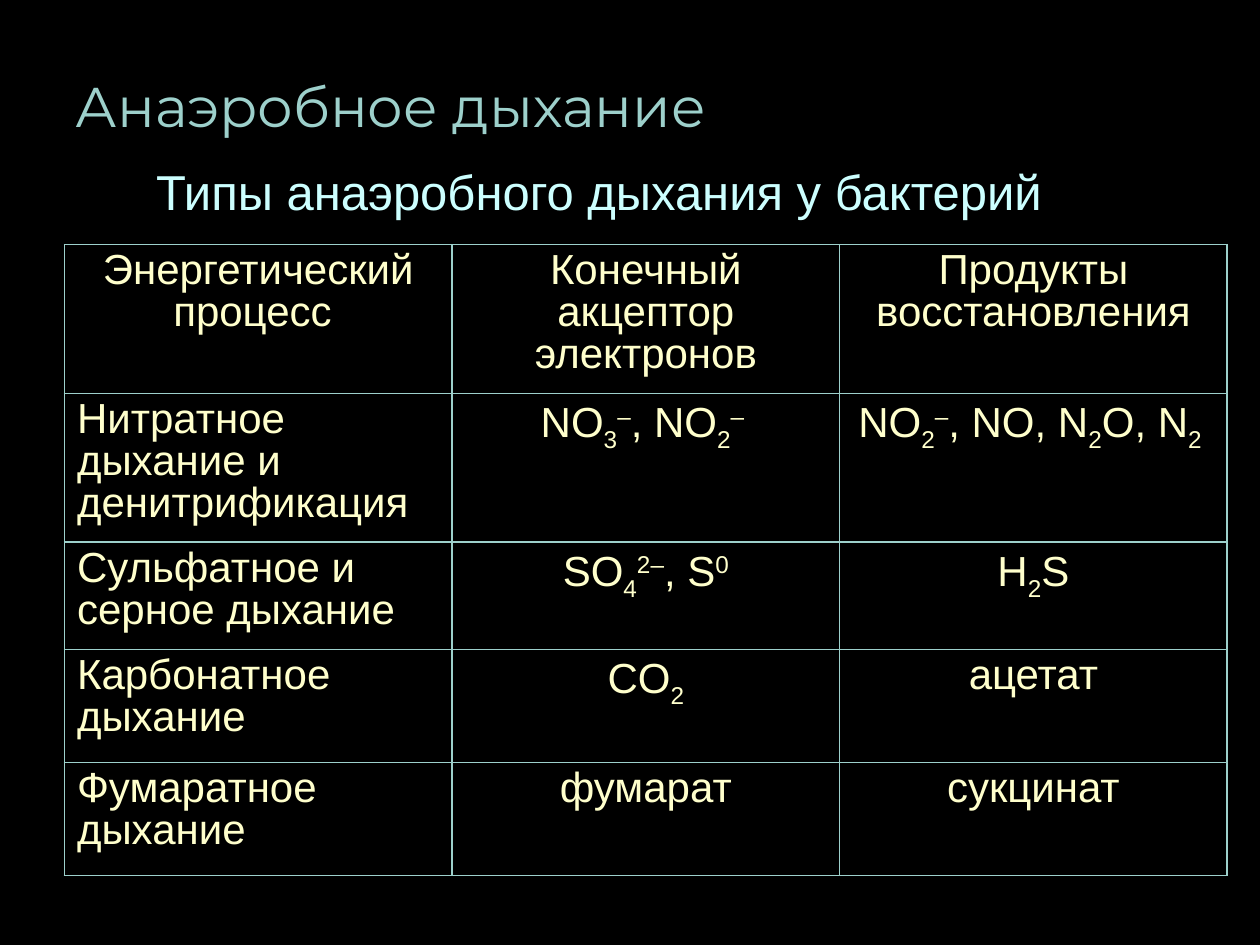
from dataclasses import dataclass

from lxml import etree
from pptx import Presentation
from pptx.dml.color import RGBColor
from pptx.enum.text import MSO_ANCHOR, MSO_AUTO_SIZE, PP_ALIGN
from pptx.oxml.ns import qn
from pptx.util import Cm, Pt

LEFT, CENTER = PP_ALIGN.LEFT, PP_ALIGN.CENTER
MIDDLE = MSO_ANCHOR.MIDDLE
NO_FIT, FIT_SHAPE = MSO_AUTO_SIZE.NONE, MSO_AUTO_SIZE.SHAPE_TO_FIT_TEXT


@dataclass(frozen=True)
class Theme:
    background: str = "000000"
    border: str = "9DD0CB"
    border_width: int = Pt(1)
    line_spacing: float = 0.9
    title: tuple = ("Montserrat", 32, "9DD0CB")
    subtitle: tuple = ("Arial", 28, "CCFFFF")
    cell: tuple = ("Arial", 24, "FFFFCC")


THEME = Theme()
BASELINES = {"_": "-25000", "^": "30000"}

# "|" parts the runs; a run led by "_" is subscript, by "^" superscript
ROWS = [
    ["Энергетический процесс ", "Конечный акцептор электронов",
     "Продукты восстановления"],
    ["Нитратное дыхание и денитрификация", "NO|_3|^–|, NO|_2|^– ",
     "NO|_2|^–|, NO, N|_2|O, N|_2 "],
    ["Сульфатное и серное дыхание", "SO|_4|^2–|, S|^0", "H|_2|S"],
    ["Карбонатное дыхание", "CO|_2", "ацетат"],
    ["Фумаратное дыхание", "фумарат", "сукцинат"],
]
ROW_HEIGHTS = [3, 3, 2.16, 2.28, 2.28]


def set_attrs(obj, **values):
    for name, value in values.items():
        setattr(obj, name, value)


def add_runs(p, text, style):
    name, size, color = style
    for part in text.split("|"):
        baseline = BASELINES.get(part[0])
        r = p.add_run()
        r.text = part[1:] if baseline else part
        set_attrs(r.font, name=name, size=Pt(size), bold=False)
        r.font.color.rgb = RGBColor.from_string(color)
        if baseline:
            r._r.get_or_add_rPr().set("baseline", baseline)


def set_borders(cell):
    tc_pr = cell._tc.get_or_add_tcPr()
    for i, side in enumerate(("lnL", "lnR", "lnT", "lnB")):
        ln = etree.Element(qn(f"a:{side}"), w=str(THEME.border_width))
        fill = etree.SubElement(ln, qn("a:solidFill"))
        etree.SubElement(fill, qn("a:srgbClr"), val=THEME.border)
        tc_pr.insert(i, ln)


def place_title(s, text, left, top, width, height):
    title = s.shapes.title
    set_attrs(title, left=left, top=top, width=width, height=height)
    tf = title.text_frame
    set_attrs(tf, vertical_anchor=MIDDLE, word_wrap=True, auto_size=NO_FIT)
    p = tf.paragraphs[0]
    set_attrs(p, alignment=LEFT, line_spacing=THEME.line_spacing)
    add_runs(p, text, THEME.title)


def add_subtitle(s, text, left, top, width, height):
    tf = s.shapes.add_textbox(left, top, width, height).text_frame
    set_attrs(tf, vertical_anchor=MIDDLE, word_wrap=False, auto_size=FIT_SHAPE)
    add_runs(tf.paragraphs[0], text, THEME.subtitle)


def add_process_table(s, rows, row_heights, left, top, width):
    """Equal columns; the header row and all but the first column are centred."""
    height = Cm(sum(row_heights))
    table = s.shapes.add_table(len(rows), len(rows[0]), left, top, width, height).table
    set_attrs(table, first_row=False, horz_banding=False)
    for column in table.columns:
        column.width = width // len(rows[0])
    for i, (texts, row_height) in enumerate(zip(rows, row_heights)):
        table.rows[i].height = Cm(row_height)
        for j, text in enumerate(texts):
            cell = table.cell(i, j)
            cell.fill.background()
            set_borders(cell)
            p = cell.text_frame.paragraphs[0]
            set_attrs(p, alignment=LEFT if i and not j else CENTER,
                      line_spacing=THEME.line_spacing)
            add_runs(p, text, THEME.cell)


def main():
    prs = Presentation()
    set_attrs(prs, slide_width=Cm(25.4), slide_height=Cm(19.05))
    s = prs.slides.add_slide(prs.slide_layouts[5])
    fill = s.background.fill
    fill.solid()
    fill.fore_color.rgb = RGBColor.from_string(THEME.background)

    place_title(s, "Анаэробное дыхание", Cm(1.27), Cm(1.27), Cm(22.86), Cm(1.85))
    add_process_table(s, ROWS, ROW_HEIGHTS, Cm(1.3), Cm(4.93), Cm(23.44))
    add_subtitle(s, "Типы анаэробного дыхания у бактерий",
                 Cm(2.9), Cm(3.12), Cm(18.85), Cm(1.45))
    prs.save("out.pptx")


if __name__ == "__main__":
    main()
